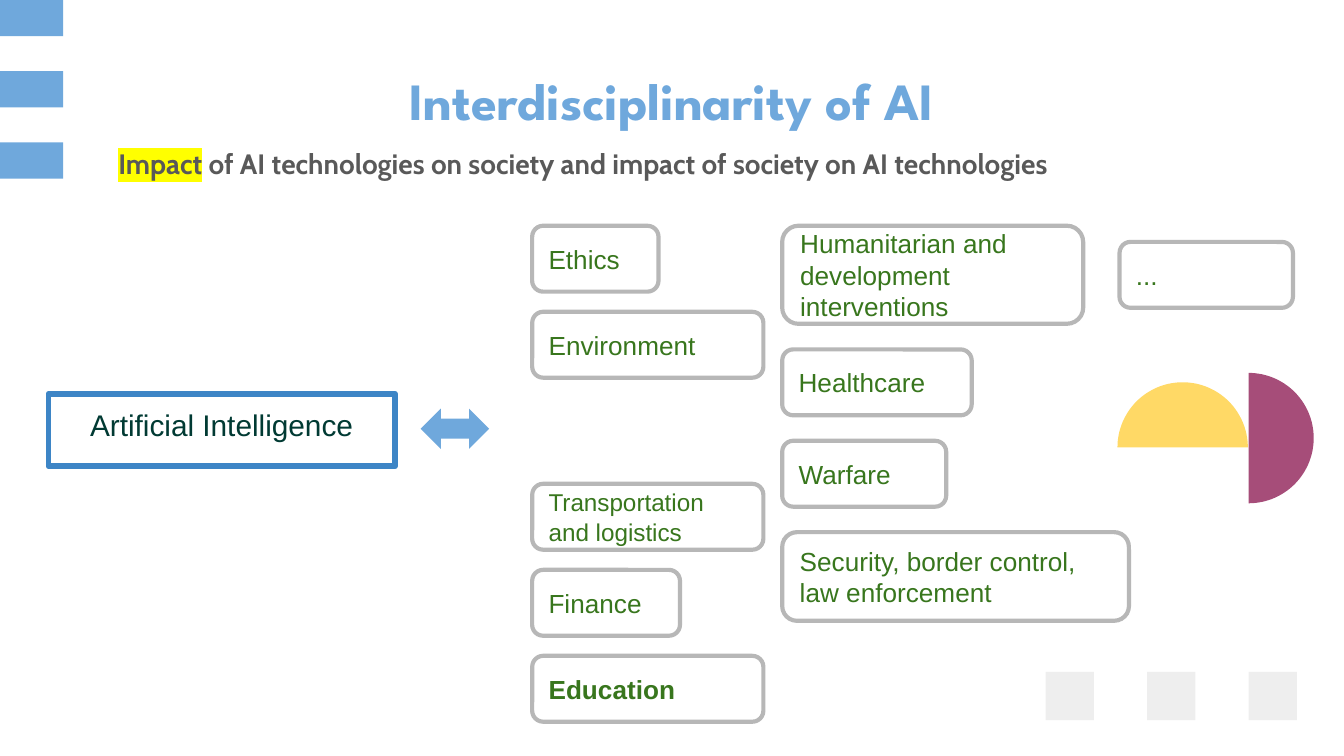
import math

from lxml import etree
from pptx import Presentation
from pptx import util as u
from pptx.dml.color import RGBColor
from pptx.enum import shapes, text
from pptx.oxml.ns import qn

BLUE, GREEN, GREY = "6FA8DC", "38761D", "B7B7B7"
LEFT, CENTER = text.PP_ALIGN.LEFT, text.PP_ALIGN.CENTER
TOP, MIDDLE = text.MSO_ANCHOR.TOP, text.MSO_ANCHOR.MIDDLE


def rgb(value):
    return RGBColor.from_string(value)


def place(sp, box):
    sp.left, sp.top, sp.width, sp.height = (u.Inches(v) for v in box)


def add_shape(slide, kind, box, fill=None, line=None, weight=0):
    sp = slide.shapes.add_shape(kind, *(u.Inches(v) for v in box))
    paint(sp, fill, line, weight)
    return sp


def paint(sp, fill=None, line=None, weight=0):
    sp.shadow.inherit = False
    if fill:
        sp.fill.solid()
        sp.fill.fore_color.rgb = rgb(fill)
    else:
        sp.fill.background()
    if line:
        sp.line.color.rgb = rgb(line)
        sp.line.width = u.Pt(weight)
    else:
        sp.line.fill.background()


def write(sp, runs, font, size, color, bold=False, align=LEFT, anchor=MIDDLE):
    """Put one paragraph in a shape and return it."""
    tf = sp.text_frame
    tf.word_wrap = True
    tf.auto_size = text.MSO_AUTO_SIZE.NONE
    tf.vertical_anchor = anchor
    tf.margin_left = tf.margin_right = tf.margin_top = tf.margin_bottom = u.Inches(0.1)
    p = tf.paragraphs[0]
    p.alignment = align
    for words in runs:
        p.add_run().text = words
    p.font.name, p.font.size, p.font.bold = font, u.Pt(size), bold
    p.font.color.rgb = rgb(color)
    return p


def highlight(run, color):
    mark = etree.SubElement(run.font._element, qn("a:highlight"))
    etree.SubElement(mark, qn("a:srgbClr"), val=color)


def add_half_disc(slide, cx, cy, radius, start, color):
    """Half disc sweeping 180 degrees clockwise from the start angle."""
    angles = [math.radians(start + 3 * i) for i in range(61)]
    points = [(u.Inches(cx + radius * math.cos(a)), u.Inches(cy + radius * math.sin(a)))
              for a in angles]
    outline = slide.shapes.build_freeform(*points[0])
    outline.add_line_segments(points[1:], close=True)
    paint(outline.convert_to_shape(), color)


def add_decoration(slide):
    rect = shapes.MSO_SHAPE.RECTANGLE
    for i in range(3):
        add_shape(slide, rect, (7.78 + 0.755 * i, 5, 0.36, 0.36), "EEEEEE")
        add_shape(slide, rect, (0, 0.53 * i, 0.47, 0.27), BLUE)
    add_half_disc(slide, 8.8, 3.33, 0.485, 180, "FFD966")
    add_half_disc(slide, 9.29, 3.26, 0.485, 270, "A64D79")


def add_heading(slide, left, top):
    title, body = slide.placeholders
    place(title, (left, top, 8.44, 0.3))
    write(title, ["Interdisciplinarity of AI"], "League Spartan", 28, BLUE, True, CENTER)

    place(body, (left, top + 0.34, 7.28, 0.79))
    p = write(body, ["Impact", " of AI technologies on society and impact of society on AI technologies"],
              "Cabin", 15, "595959", True, anchor=TOP)
    p.line_spacing, p.space_before = 1.25, u.Pt(10)
    highlight(p.runs[0], "FFFF00")
    props = p._p.get_or_add_pPr()
    props.set("marL", "0")
    props.set("indent", "0")
    bullet = etree.Element(qn("a:buNone"))
    props.find(qn("a:defRPr")).addprevious(bullet)


def add_source_topic(slide, left, top):
    box = add_shape(slide, shapes.MSO_SHAPE.RECTANGLE, (left, top, 2.58, 0.54), None, "3D85C6", 3)
    write(box, ["Artificial Intelligence"], "Arial", 16, "013A33", align=CENTER, anchor=TOP)
    add_shape(slide, shapes.MSO_SHAPE.LEFT_RIGHT_ARROW, (left + 2.77, top + 0.11, 0.51, 0.3), BLUE)


def add_field(slide, label, left, top, width, height=0.49, size=14, bold=False):
    box = add_shape(slide, shapes.MSO_SHAPE.ROUNDED_RECTANGLE, (left, top, width, height),
                    None, GREY, 2.25)
    write(box, [label], "Arial", size, GREEN, bold)


def add_first_column(slide, left, top):
    fields = [  # row, label, width, size, bold
        (0, "Ethics", 0.94, 14, False),
        (1, "Environment", 1.72, 14, False),
        (3, "Transportation and logistics", 1.72, 13, False),
        (4, "Finance", 1.1, 14, False),
        (5, "Education", 1.72, 14, True),
    ]
    for row, label, width, size, bold in fields:
        add_field(slide, label, left, top + 0.64 * row, width, size=size, bold=bold)


def add_second_column(slide, left, top, gap=0.19):
    fields = [
        ("Humanitarian and development interventions", 2.24, 0.73),
        ("Healthcare", 1.41, 0.49),
        ("Warfare", 1.22, 0.49),
        ("Security, border control, law enforcement", 2.58, 0.66),
    ]
    for label, width, height in fields:
        add_field(slide, label, left, top, width, height)
        top += height + gap


def main():
    prs = Presentation()
    prs.slide_width, prs.slide_height = u.Pt(720), u.Pt(405)
    slide = prs.slides.add_slide(prs.slide_layouts[1])
    add_decoration(slide)
    add_heading(slide, 0.78, 0.59)
    add_source_topic(slide, 0.36, 2.93)
    add_first_column(slide, 3.96, 1.68)
    add_second_column(slide, 5.82, 1.68)
    add_field(slide, "...", 8.33, 1.8, 1.29)
    prs.save("out.pptx")


if __name__ == "__main__":
    main()
